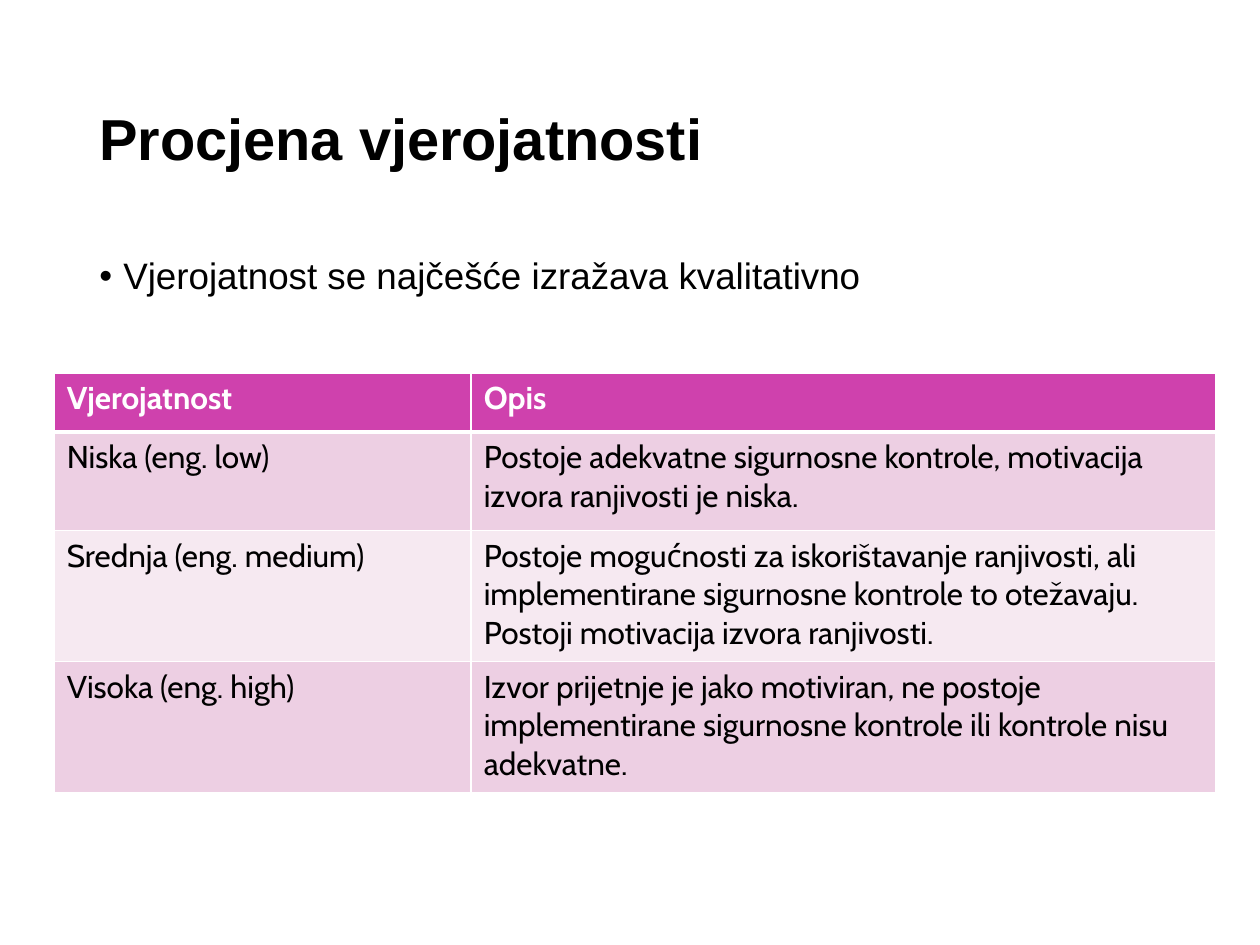
from lxml.etree import SubElement
from pptx import Presentation
from pptx.dml.color import RGBColor
from pptx.enum.text import MSO_ANCHOR as Anchor
from pptx.oxml.ns import qn
from pptx.util import Inches, Pt

TITLE = "Procjena vjerojatnosti"
POINT = "Vjerojatnost se najčešće izražava kvalitativno"
LIKELIHOODS = [
    ("Vjerojatnost", "Opis"),
    ("Niska (eng. low)",
     "Postoje adekvatne sigurnosne kontrole, motivacija izvora ranjivosti je niska."),
    ("Srednja (eng. medium)",
     "Postoje mogućnosti za iskorištavanje ranjivosti, ali implementirane sigurnosne "
     "kontrole to otežavaju. Postoji motivacija izvora ranjivosti."),
    ("Visoka (eng. high)",
     "Izvor prijetnje je jako motiviran, ne postoje implementirane sigurnosne kontrole "
     "ili kontrole nisu adekvatne."),
]
COLORS = {"text": "000000", "light": "FFFFFF", "header": "CF41AD",
          "odd": "EDCFE3", "even": "F6E9F1"}

SLIDE_WIDTH, SLIDE_HEIGHT = 10, 7.5
MARGIN = 0.69
COLUMN_WIDTHS = (3.31, 5.91)
ROW_HEIGHTS = (0.47, 0.78, 1.04, 1.04)
TABLE_LEFT, TABLE_TOP = 0.43, 2.96
BULLET_INDENT = 0.19


def write(frame, text, *, size, font="Arial", color="text", bold=False,
          spacing=None, bullet=None, anchor=Anchor.TOP):
    frame.word_wrap = True
    frame.vertical_anchor = anchor
    para = frame.paragraphs[0]
    if spacing:
        para.line_spacing = spacing
    if bullet:
        props = para._p.get_or_add_pPr()
        props.set("marL", str(Inches(BULLET_INDENT)))
        props.set("indent", str(-Inches(BULLET_INDENT)))
        SubElement(props, qn("a:buFont")).set("typeface", "Arial")
        SubElement(props, qn("a:buChar")).set("char", bullet)
    span = para.add_run()
    span.text = text
    span.font.name = font
    span.font.size = Pt(size)
    span.font.bold = bold
    span.font.color.rgb = RGBColor.from_string(COLORS[color])


def add_text(page, text, top, height, **style):
    box = page.shapes.add_textbox(Inches(MARGIN), Inches(top),
                                  Inches(SLIDE_WIDTH - 2 * MARGIN), Inches(height))
    write(box.text_frame, text, **style)


def set_borders(cell, **widths):
    """Draw light cell borders; widths are points by side: L, R, T, B."""
    props = cell._tc.get_or_add_tcPr()
    for side, width in widths.items():
        line = SubElement(props, qn(f"a:ln{side}"), w=str(Pt(width)))
        fill = SubElement(line, qn("a:solidFill"))
        SubElement(fill, qn("a:srgbClr"), val=COLORS["light"])


def add_likelihood_table(page):
    table = page.shapes.add_table(
        len(LIKELIHOODS), len(COLUMN_WIDTHS), Inches(TABLE_LEFT), Inches(TABLE_TOP),
        Inches(sum(COLUMN_WIDTHS)), Inches(sum(ROW_HEIGHTS))).table
    for column, width in zip(table.columns, COLUMN_WIDTHS):
        column.width = Inches(width)
    for index, (row, height, texts) in enumerate(zip(table.rows, ROW_HEIGHTS, LIKELIHOODS)):
        row.height = Inches(height)
        header = index == 0
        fill = "header" if header else "odd" if index % 2 else "even"
        for cell, text in zip(row.cells, texts):
            set_borders(cell, L=1, R=1, T=3 if index == 1 else 1, B=3 if header else 1)
            cell.fill.solid()
            cell.fill.fore_color.rgb = RGBColor.from_string(COLORS[fill])
            write(cell.text_frame, text, size=18, font="Cabin", bold=header,
                  color="light" if header else "text")


def main():
    deck = Presentation()
    deck.slide_width, deck.slide_height = Inches(SLIDE_WIDTH), Inches(SLIDE_HEIGHT)
    page = deck.slides.add_slide(deck.slide_layouts[6])
    add_text(page, TITLE, 0.4, 1.45, size=33, bold=True, spacing=0.9, anchor=Anchor.MIDDLE)
    add_text(page, POINT, 2, 4.76, size=21, spacing=0.9, bullet="•")
    add_likelihood_table(page)
    deck.save("out.pptx")


if __name__ == "__main__":
    main()
